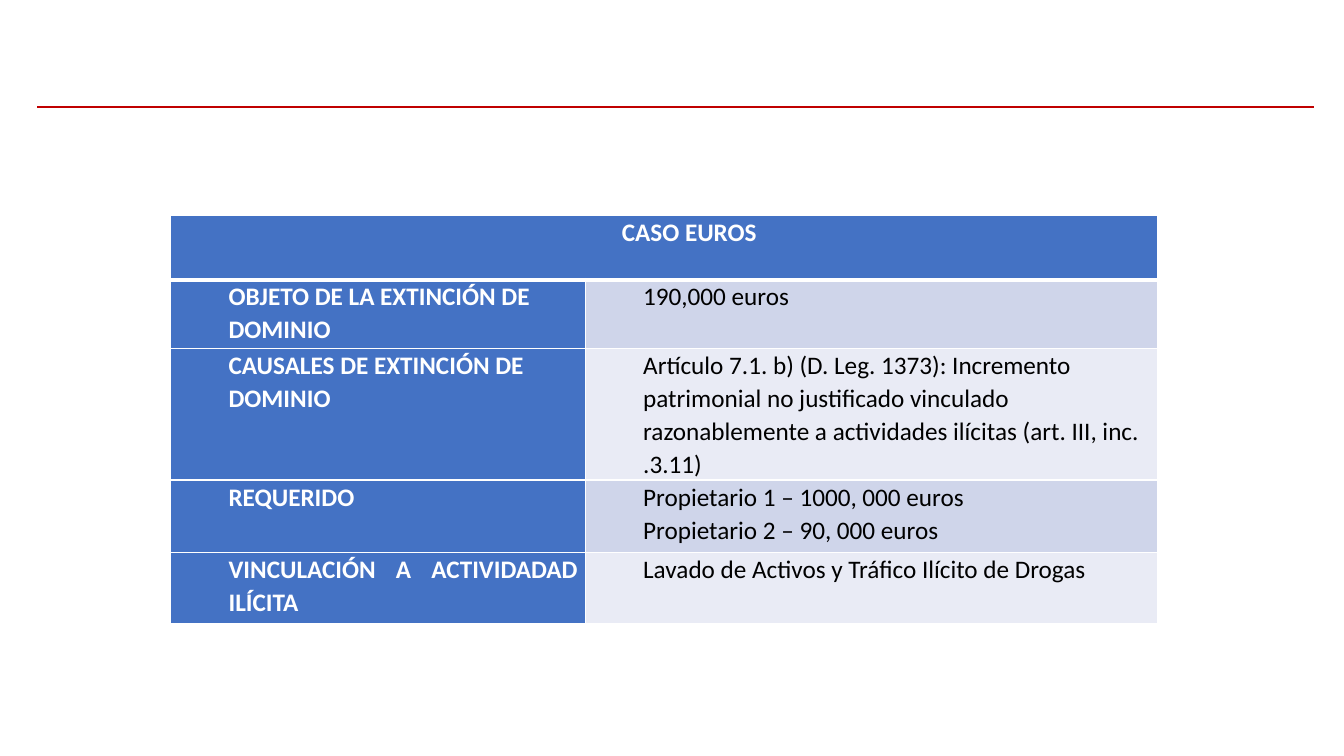
"""Builds the "Caso Euros" slide: a red rule above a two-column case table."""
from lxml import etree
from pptx import Presentation
from pptx import util as u
from pptx.dml.color import RGBColor
from pptx.enum import shapes, text
from pptx.oxml.ns import qn

COLORS = {"rule": "C00000", "head": "4472C4", "odd": "CFD5EA",
          "even": "E9EBF5", "white": "FFFFFF", "black": "000000"}
LEFT, JUSTIFY, CENTER = (text.PP_ALIGN.LEFT, text.PP_ALIGN.JUSTIFY,
                         text.PP_ALIGN.CENTER)
COL_WIDTHS = [10.45, 14.42]
ROWS = [
    (1.63, CENTER, "CASO EUROS", []),
    (1.73, LEFT, "OBJETO DE LA EXTINCIÓN DE DOMINIO", ["190,000 euros"]),
    (2.74, LEFT, "CAUSALES DE EXTINCIÓN DE DOMINIO",
     ["Artículo 7.1. b) (D. Leg. 1373): Incremento patrimonial no justificado "
      "vinculado razonablemente a actividades ilícitas (art. III, inc. .3.11)"]),
    (1.83, JUSTIFY, "REQUERIDO",
     ["Propietario 1 – 1000, 000 euros", "Propietario 2 – 90, 000 euros"]),
    (1.78, JUSTIFY, "VINCULACIÓN A ACTIVIDADAD ILÍCITA",
     ["Lavado de Activos y Tráfico Ilícito de Drogas"]),
]
MARGINS = {"margin_left": u.Cm(0.19), "margin_right": u.Cm(0.19),
           "margin_top": 0, "margin_bottom": 0}


def style_cell(cell, fill, bottom):
    """Sets the margins, fill and white borders of a table cell."""
    for name, value in MARGINS.items():
        setattr(cell, name, value)
    cell.fill.solid()
    cell.fill.fore_color.rgb = RGBColor.from_string(COLORS[fill])
    tcPr = cell._tc.get_or_add_tcPr()
    for i, (side, width) in enumerate(zip("LRTB", (1, 1, 1, bottom))):
        ln = etree.Element(qn(f"a:ln{side}"), w=str(u.Pt(width)))
        solid = etree.SubElement(ln, qn("a:solidFill"))
        etree.SubElement(solid, qn("a:srgbClr"), val=COLORS["white"])
        tcPr.insert(i, ln)


def write_cell(cell, lines, align, color, bold, after):
    """Writes indented paragraphs, with space after the last one."""
    tf = cell.text_frame
    for i, line in enumerate(lines):
        p = tf.paragraphs[0] if i == 0 else tf.add_paragraph()
        pPr = p._p.get_or_add_pPr()
        pPr.set("marL", str(u.Cm(1.27)))
        pPr.set("indent", "0")
        space = u.Pt(after if i == len(lines) - 1 else 0)
        for name, value in {"alignment": align, "line_spacing": 1.07,
                            "space_after": space}.items():
            setattr(p, name, value)
        r = p.add_run()
        r.text = line
        for name, value in {"name": "Calibri", "size": u.Pt(18),
                            "bold": bold}.items():
            setattr(r.font, name, value)
        r.font.color.rgb = RGBColor.from_string(COLORS[color])


prs = Presentation()
prs.slide_width, prs.slide_height = u.Cm(33.87), u.Cm(19.05)
s = prs.slides.add_slide(prs.slide_layouts[6])

rule = s.shapes.add_connector(shapes.MSO_CONNECTOR.STRAIGHT, u.Cm(0.94),
                              u.Cm(2.7), u.Cm(33.12), u.Cm(2.7))
rule.line.color.rgb = RGBColor.from_string(COLORS["rule"])
rule.line.width = u.Pt(1.5)
etree.SubElement(rule._element.spPr, qn("a:effectLst"))

table = s.shapes.add_table(
    len(ROWS), len(COL_WIDTHS), u.Cm(4.3), u.Cm(5.42), u.Cm(sum(COL_WIDTHS)),
    u.Cm(sum(row[0] for row in ROWS))).table
table.first_col = True
for column, width in zip(table.columns, COL_WIDTHS):
    column.width = u.Cm(width)

for i, (height, align, label, details) in enumerate(ROWS):
    table.rows[i].height = u.Cm(height)
    left, right = table.cell(i, 0), table.cell(i, 1)
    body = "head" if i == 0 else "odd" if i % 2 else "even"
    bottom = 3 if i == 0 else 1
    style_cell(left, "head", bottom)
    style_cell(right, body, bottom)
    write_cell(left, [label], align, "white", True, 8 if i == 0 else 0)
    write_cell(right, details, align, "black", False, 8)
table.cell(0, 0).merge(table.cell(0, 1))

prs.save("out.pptx")
